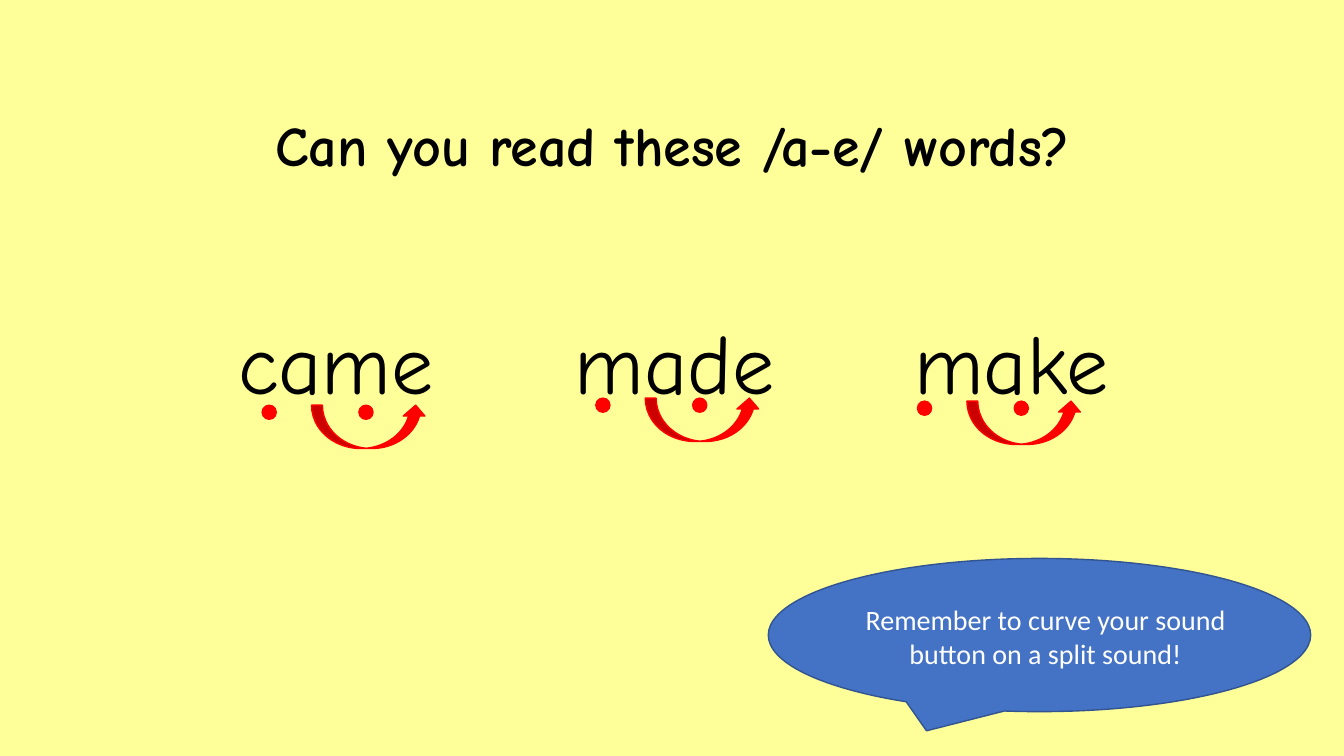
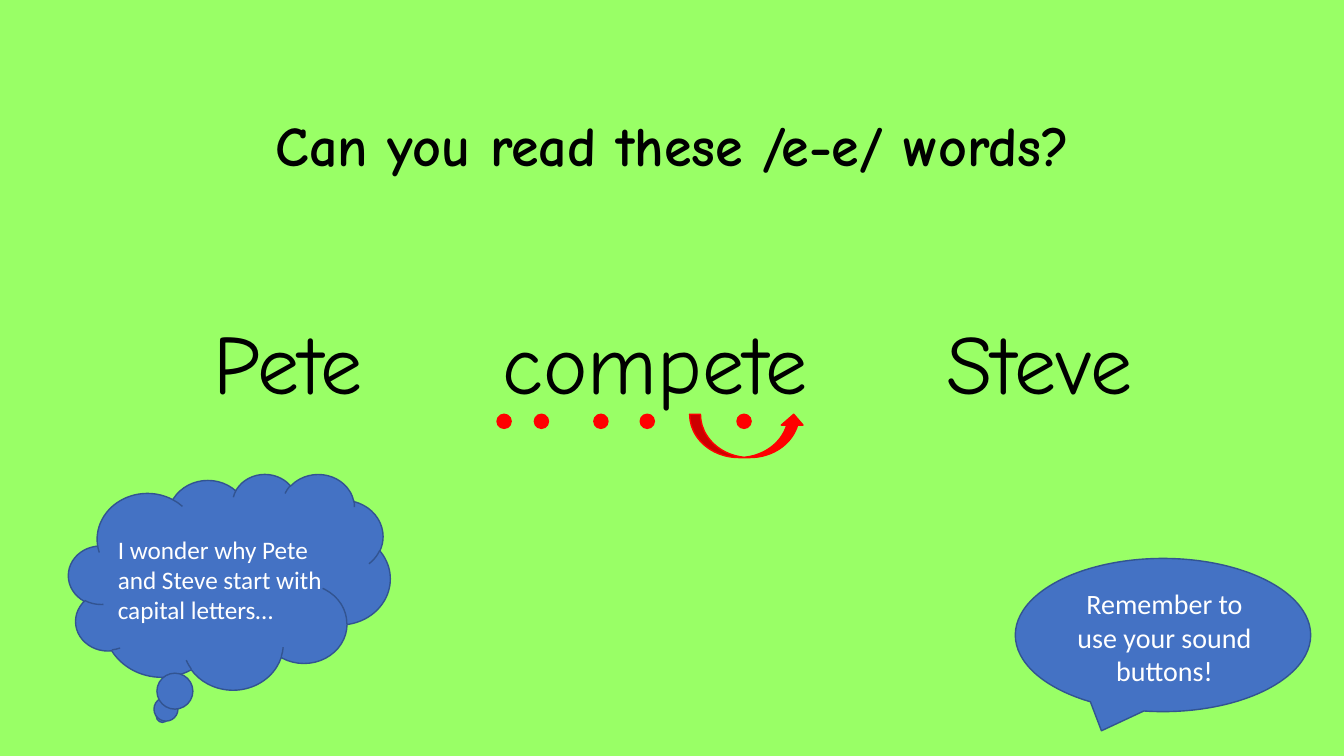
from pptx import Presentation
from pptx.dml.color import RGBColor
from pptx.enum.shapes import MSO_SHAPE as Preset
from pptx.enum.text import PP_ALIGN as Align
from pptx.util import Inches, Pt

YELLOW = RGBColor(0xFF, 0xFF, 0x99)
GREEN = RGBColor(0x99, 0xFF, 0x66)
BLUE = RGBColor(0x44, 0x72, 0xC4)
DARK_BLUE = RGBColor(0x32, 0x54, 0x91)
RED = RGBColor(0xFF, 0x00, 0x00)
BLACK = RGBColor(0x00, 0x00, 0x00)
WHITE = RGBColor(0xFF, 0xFF, 0xFF)

TITLE = {"name": "Comic Neue", "size": Pt(40), "bold": True}
WORD = {"name": "Comic Neue", "size": Pt(60), "bold": False}
SPEECH = {"name": "Calibri", "size": Pt(20)}
THOUGHT = {"name": "Calibri", "size": Pt(18)}

WORD_WIDTH = 3.6
DOT = 0.14
ARROW_SIZE = (1.14, 0.43)
FIRST_DOT_SHIFT = -0.49
INNER_DOT_SHIFT = 0.47


def add_text(slide, text, box, style, color, align=Align.CENTER):
    frame = slide.shapes.add_textbox(*map(Inches, box)).text_frame
    frame.word_wrap = True
    paragraph = frame.paragraphs[0]
    paragraph.alignment = align
    run = paragraph.add_run()
    run.text = text
    for attribute, value in style.items():
        setattr(run.font, attribute, value)
    run.font.color.rgb = color


def add_preset(slide, preset, box, fill, outline):
    shape = slide.shapes.add_shape(preset, *map(Inches, box))
    shape.shadow.inherit = False
    shape.fill.solid()
    shape.fill.fore_color.rgb = fill
    shape.line.color.rgb = outline
    shape.line.width = Pt(1)


def add_bubble(slide, preset, bubble_box, text, text_box, style, align=Align.CENTER):
    add_preset(slide, preset, bubble_box, BLUE, DARK_BLUE)
    add_text(slide, text, text_box, style, WHITE, align)


def add_sound_dot(slide, left, top):
    add_preset(slide, Preset.OVAL, (left, top, DOT, DOT), RED, RED)


def add_split_sound(slide, left, top):
    for shift in (FIRST_DOT_SHIFT, INNER_DOT_SHIFT):
        add_sound_dot(slide, left + shift, top)
    add_preset(slide, Preset.CURVED_UP_ARROW, (left, top, *ARROW_SIZE), RED, RED)


def add_word_slide(deck, background, sound, words):
    slide = deck.slides.add_slide(deck.slide_layouts[6])
    slide.background.fill.solid()
    slide.background.fill.fore_color.rgb = background
    title = f"Can you read these /{sound}/ words?"
    add_text(slide, title, (0.12, 1.05, 13.1, 0.75), TITLE, BLACK)
    for word, center in words:
        box = (center - WORD_WIDTH / 2, 3.03, WORD_WIDTH, 1.08)
        add_text(slide, word, box, WORD, BLACK)
    return slide


def add_a_e_slide(deck):
    words = [("came", 3.33), ("made", 6.69), ("make", 10.03)]
    slide = add_word_slide(deck, YELLOW, "a-e", words)
    add_bubble(slide, Preset.OVAL_CALLOUT, (7.62, 5.54, 5.38, 1.52),
               "Remember to curve your sound button on a split sound!",
               (8.1, 5.93, 4.54, 0.77), SPEECH)
    for left, top in [(3.09, 4.02), (6.4, 3.95), (9.59, 3.98)]:
        add_split_sound(slide, left, top)


def add_e_e_slide(deck):
    words = [("Pete", 2.86), ("compete", 6.5), ("Steve", 10.31)]
    slide = add_word_slide(deck, GREEN, "e-e", words)
    add_bubble(slide, Preset.OVAL_CALLOUT, (10.07, 5.54, 2.93, 1.52),
               "Remember to use your sound buttons!",
               (10.46, 5.77, 2.18, 1.11), SPEECH)
    add_bubble(slide, Preset.CLOUD_CALLOUT, (0.68, 4.7, 3.19, 2.14),
               "I wonder why Pete and Steve start with capital letters…",
               (1.07, 5.25, 2.3, 1.01), THOUGHT, Align.LEFT)
    sounds_top = 4.11
    add_split_sound(slide, 6.84, sounds_top)
    for left in (4.93, 5.3, 5.89):
        add_sound_dot(slide, left, sounds_top)


def main():
    deck = Presentation()
    deck.slide_width = Inches(13.33)
    deck.slide_height = Inches(7.5)
    add_a_e_slide(deck)
    add_e_e_slide(deck)
    deck.save("out.pptx")


if __name__ == "__main__":
    main()
